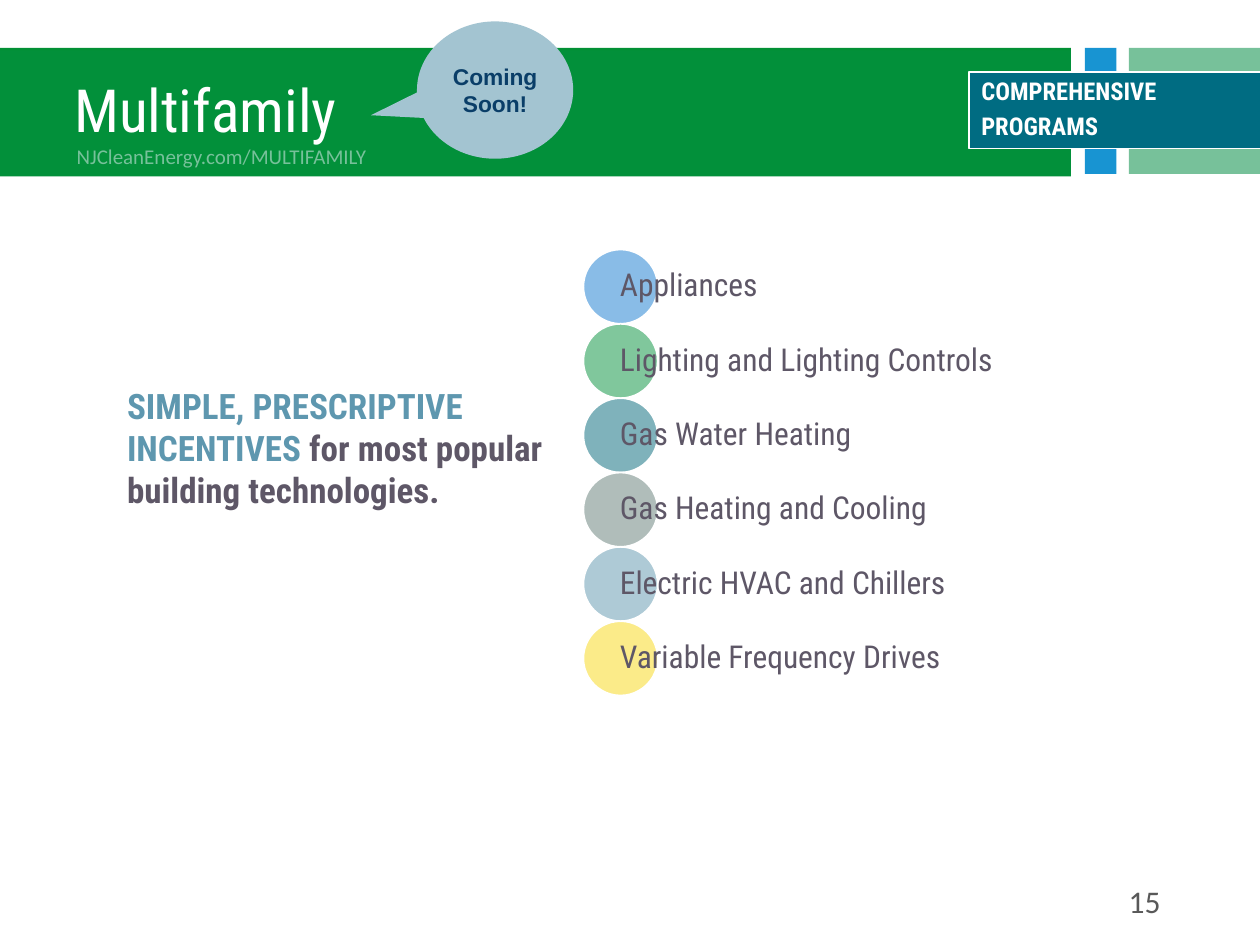
"""Build the Multifamily incentives slide."""
from dataclasses import dataclass
from typing import Optional

from lxml import etree
from pptx import Presentation
from pptx import util as u
from pptx.dml.color import RGBColor
from pptx.enum import shapes, text
from pptx.oxml.ns import qn

COLORS = {
    "white": "FFFFFF", "blue": "1894D2", "mint": "77C19A", "green": "029035",
    "title_green": "02903A", "teal": "006C82", "sky": "A3C4D1", "navy": "0A3E68",
    "gray": "595959", "body": "5E5767", "steel": "5E97AF", "azure": "147BD1",
    "deep_teal": "006778", "sage": "627D77", "yellow": "F9D815",
}
CONDENSED = "Roboto Condensed"
LEFT = text.PP_ALIGN.LEFT
RECTANGLE = shapes.MSO_SHAPE.RECTANGLE


@dataclass
class Box:
    left: float
    top: float
    width: float
    height: float

    def lengths(self) -> list:
        return [u.Inches(n) for n in (self.left, self.top, self.width, self.height)]


@dataclass
class Run:
    words: str
    size: float
    color: str
    font: str = CONDENSED
    bold: bool = False


@dataclass
class Technology:
    label: str
    color: str


TECHNOLOGIES = [
    Technology("Appliances", "azure"),
    Technology("Lighting and Lighting Controls", "title_green"),
    Technology("Gas Water Heating", "deep_teal"),
    Technology("Gas Heating and Cooling", "sage"),
    Technology("Electric HVAC and Chillers", "steel"),
    Technology("Variable Frequency Drives", "yellow"),
]


def rgb(name: str) -> RGBColor:
    """Return the named colour."""
    return RGBColor.from_string(COLORS[name])


def add_figure(parent, kind, box: Box, fill: str, outline: Optional[str] = None,
               alpha: Optional[int] = None):
    """Add a filled shape with an optional outline and opacity percentage."""
    shape = parent.add_shape(kind, *box.lengths())
    shape.shadow.inherit = False
    shape.fill.solid()
    shape.fill.fore_color.rgb = rgb(fill)
    if alpha is not None:
        color = shape.fill._xPr.find(f"{qn('a:solidFill')}/{qn('a:srgbClr')}")
        etree.SubElement(color, qn("a:alpha"), val=str(alpha * 1000))
    if outline:
        shape.line.color.rgb = rgb(outline)
        shape.line.width = u.Pt(1)
    else:
        shape.line.fill.background()
    return shape


def write(shape, lines: list, align=LEFT, anchor=text.MSO_ANCHOR.MIDDLE,
          spacing: Optional[float] = None, after: float = 0,
          insets: tuple = (0.1, 0.05)) -> None:
    """Write each list of runs as one paragraph of the shape."""
    frame = shape.text_frame
    frame.word_wrap = True
    frame.vertical_anchor = anchor
    frame.margin_left = frame.margin_right = u.Inches(insets[0])
    frame.margin_top = frame.margin_bottom = u.Inches(insets[1])
    for index, runs in enumerate(lines):
        paragraph = frame.add_paragraph() if index else frame.paragraphs[0]
        paragraph.alignment = align
        paragraph.line_spacing = spacing
        paragraph.space_after = u.Pt(after)
        for item in runs:
            run = paragraph.add_run()
            run.text = item.words
            run.font.name = item.font
            run.font.size = u.Pt(item.size)
            run.font.bold = item.bold
            run.font.color.rgb = rgb(item.color)


def add_text(parent, box: Box, runs: list, grow: bool = False, **style):
    """Add a text box holding one paragraph."""
    shape = parent.add_textbox(*box.lengths())
    write(shape, [runs], **style)
    if grow:
        shape.text_frame.auto_size = text.MSO_AUTO_SIZE.SHAPE_TO_FIT_TEXT
    return shape


def add_header(canvas) -> None:
    """Draw the coloured bands, the page number, the title and the web address."""
    for left, width, color in ((8.61, 0.25, "blue"), (8.96, 1.04, "mint"),
                               (-0.01, 8.51, "green")):
        add_figure(canvas, RECTANGLE, Box(left, 0.38, width, 1), color)
    top = text.MSO_ANCHOR.TOP
    add_text(canvas, Box(7.06, 6.95, 2.25, 0.4), [Run("15", 18, "gray", "Calibri")],
             align=text.PP_ALIGN.RIGHT, anchor=top)
    title = add_figure(canvas, RECTANGLE, Box(-0.01, 0.4, 8.51, 1), "title_green")
    write(title, [[Run("Multifamily", 34, "white")]], spacing=0.9)
    properties = title.text_frame.paragraphs[0]._p.get_or_add_pPr()
    properties.set("marL", str(u.Inches(0.5)))
    properties.set("indent", "0")
    add_text(canvas, Box(0.51, 1.09, 4.04, 0.3),
             [Run("NJCleanEnergy.com/MULTIFAMILY", 12, "mint", "Calibri")],
             grow=True, anchor=top)


def add_technologies(canvas) -> None:
    """Draw the grouped list of technologies with their circles."""
    group = canvas.add_group_shape().shapes
    size = 0.59
    for index, technology in enumerate(TECHNOLOGIES):
        top = 1.98 + index * size
        add_figure(group, shapes.MSO_SHAPE.OVAL, Box(4.63, top, size, size),
                   technology.color, "white", 50)
        add_text(group, Box(4.92, top, 3.16, size), [Run(technology.label, 18, "body")],
                 spacing=0.9, insets=(0, 0.03))


def add_callouts(canvas) -> None:
    """Draw the statement, the programme tag and the speech bubble."""
    add_text(canvas, Box(0.91, 3, 3.51, 1.78),
             [Run("SIMPLE, PRESCRIPTIVE INCENTIVES", 20, "steel", bold=True),
              Run(" for most popular building technologies.", 20, "body", bold=True)],
             grow=True, anchor=text.MSO_ANCHOR.TOP)
    tag = add_figure(canvas, RECTANGLE, Box(7.69, 0.57, 2.4, 0.61), "teal", "white")
    write(tag, [[Run(word, 14, "white", bold=True)] for word in ("COMPREHENSIVE", "PROGRAMS")],
          spacing=0.9, after=5, insets=(0.1, 0.06))
    bubble = add_figure(canvas, shapes.MSO_SHAPE.OVAL_CALLOUT,
                        Box(3.31, 0.17, 1.24, 1.09), "sky")
    bubble.adjustments[0] = -0.795
    bubble.adjustments[1] = 0.183
    write(bubble, [[Run("Coming Soon!", 13, "navy", "Arial", True)]],
          align=text.PP_ALIGN.CENTER)


def main() -> None:
    """Build and save the presentation."""
    presentation = Presentation()
    presentation.slide_width = u.Inches(10)
    presentation.slide_height = u.Inches(7.5)
    slide = presentation.slides.add_slide(presentation.slide_layouts[6])
    add_header(slide.shapes)
    add_technologies(slide.shapes)
    add_callouts(slide.shapes)
    presentation.save("out.pptx")


if __name__ == "__main__":
    main()
